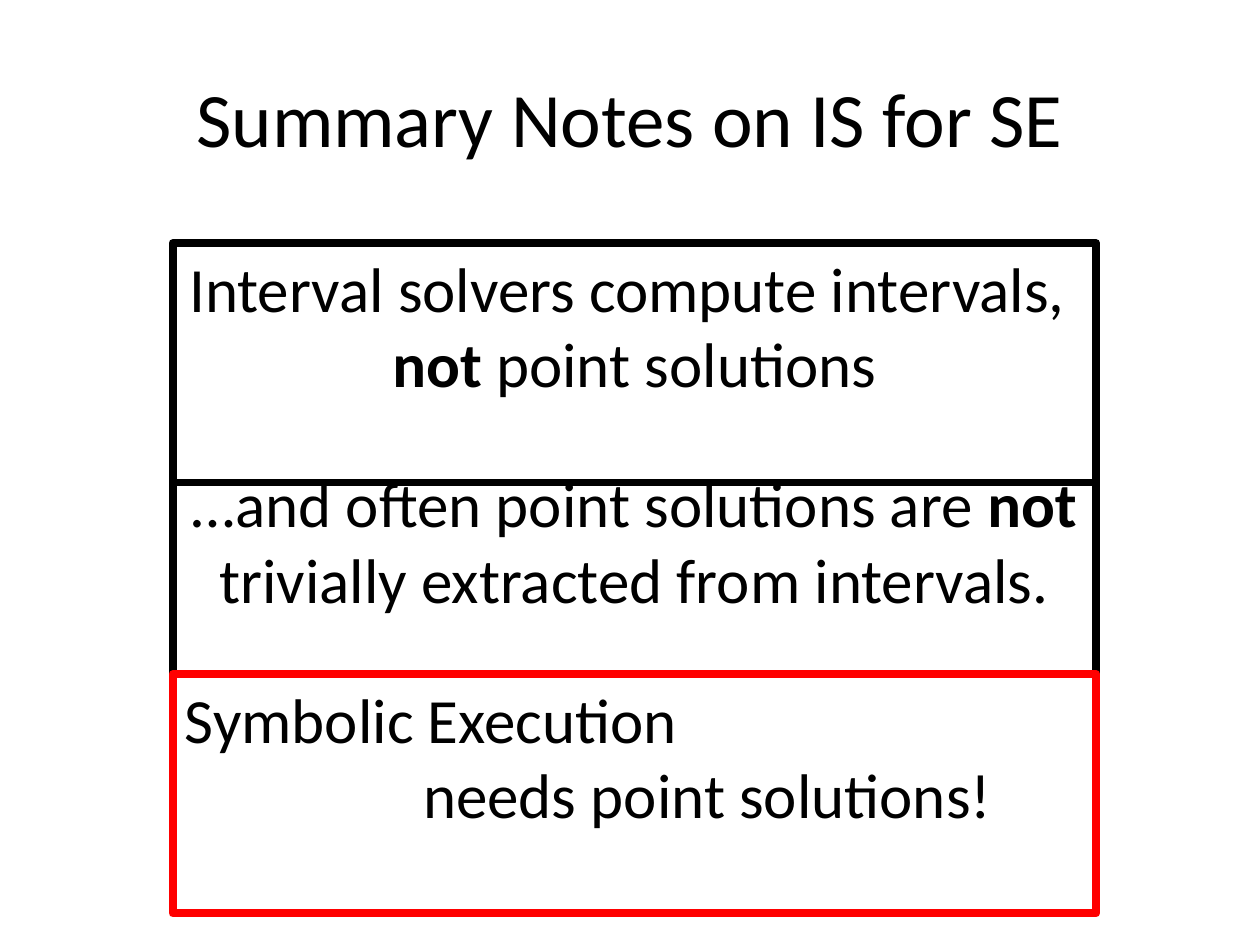
from pptx import Presentation
from pptx.dml.color import RGBColor
from pptx.enum.shapes import MSO_SHAPE as SHAPE
from pptx.enum.text import MSO_ANCHOR as ANCHOR, PP_ALIGN as ALIGN
from pptx.util import Inches, Pt

FONT = "Calibri"
BLACK, WHITE, RED = "000000", "FFFFFF", "FF0000"
LEFT, TOP, WIDTH, HEIGHT, PITCH = 1.37, 1.93, 7.33, 1.9, 1.71

NOTES = [
    (1, BLACK, [(ALIGN.CENTER, 0, [("…and often point solutions are ", False),
                                   ("not", True),
                                   (" trivially extracted from intervals.", False)])]),
    (0, BLACK, [(ALIGN.CENTER, 0, [("Interval solvers compute intervals, ", False)]),
                (ALIGN.CENTER, 0, [("not", True), (" point solutions", False)])]),
    (2, RED, [(ALIGN.LEFT, 0, [("Symbolic Execution", False)]),
              (ALIGN.LEFT, 1.89, [("needs point solutions!", False)])]),
]


def color(value):
    return RGBColor.from_string(value)


def add_run(p, text, size, bold=False):
    r = p.add_run()
    r.text = text
    r.font.name = FONT
    r.font.size = Pt(size)
    r.font.bold = bold
    r.font.color.rgb = color(BLACK)


def add_title(s, box, text):
    tf = s.shapes.add_textbox(*map(Inches, box)).text_frame
    tf.word_wrap = True
    tf.vertical_anchor = ANCHOR.MIDDLE
    p = tf.paragraphs[0]
    p.alignment = ALIGN.CENTER
    add_run(p, text, 44)


def add_note(s, box, outline, paragraphs):
    sp = s.shapes.add_shape(SHAPE.RECTANGLE, *map(Inches, box))
    sp.shadow.inherit = False
    sp.fill.solid()
    sp.fill.fore_color.rgb = color(WHITE)
    sp.line.color.rgb = color(outline)
    sp.line.width = Pt(4.5)
    tf = sp.text_frame
    tf.word_wrap = True
    tf.vertical_anchor = ANCHOR.TOP
    for i, (alignment, indent, runs) in enumerate(paragraphs):
        p = tf.add_paragraph() if i else tf.paragraphs[0]
        p.alignment = alignment
        if indent:
            p._p.get_or_add_pPr().set("marL", str(Inches(indent)))
        for text, bold in runs:
            add_run(p, text, 36, bold)


def main():
    prs = Presentation()
    prs.slide_width, prs.slide_height = Inches(10), Inches(7.5)
    s = prs.slides.add_slide(prs.slide_layouts[6])
    add_title(s, (0.5, 0.3, 9, 1.25), "Summary Notes on IS for SE")
    for row, outline, paragraphs in NOTES:
        add_note(s, (LEFT, TOP + row * PITCH, WIDTH, HEIGHT), outline, paragraphs)
    prs.save("out.pptx")


if __name__ == "__main__":
    main()
